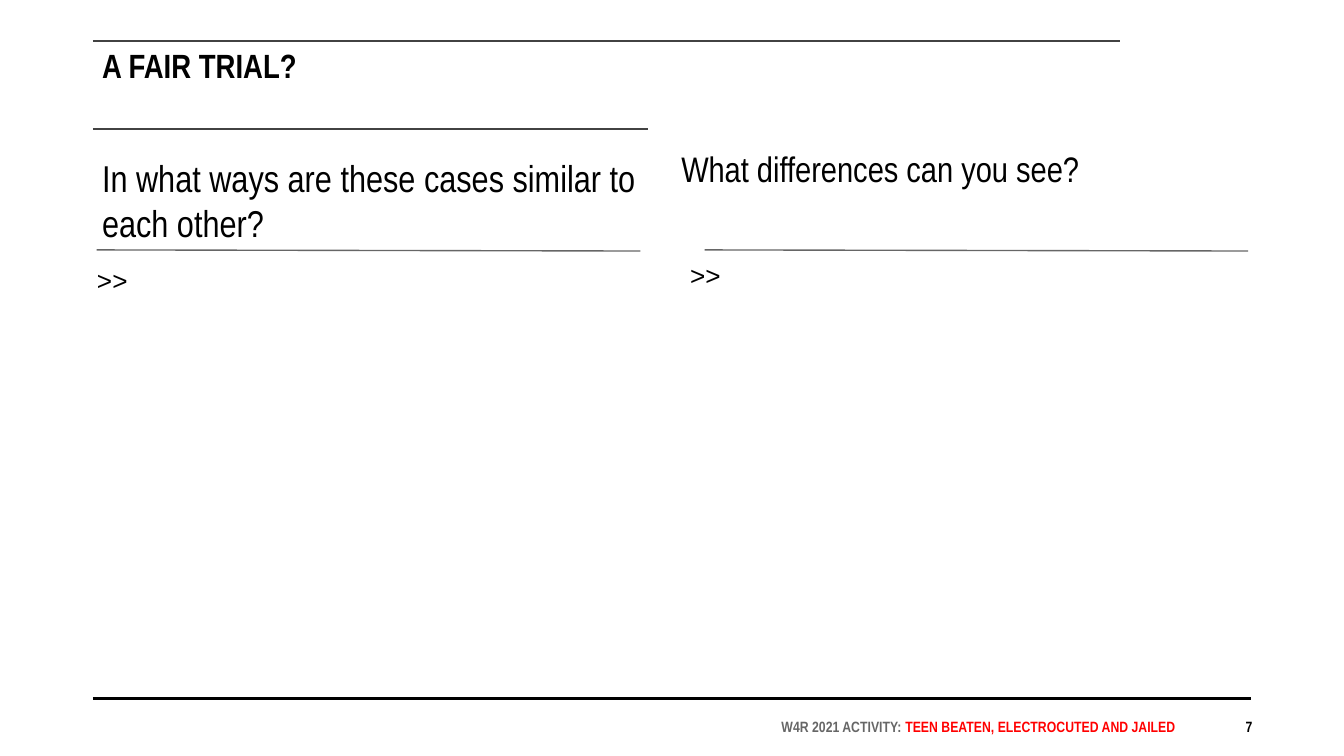
"""Build the slide that compares two cases under the title A FAIR TRIAL?"""
from lxml import etree
from pptx import Presentation
from pptx import util as u
from pptx.dml.color import RGBColor
from pptx.enum import shapes, text
from pptx.oxml import ns

Pt = u.Pt
theme = {
    "ink": RGBColor(0, 0, 0),
    "rule": RGBColor(0x42, 0x42, 0x42),
    "gray": RGBColor(0x66, 0x66, 0x66),
    "red": RGBColor(0xFF, 0, 0),
    "head": "Arial Narrow",
    "body": "Arial",
    "title": 18, "left": 20, "right": 19, "note": 14, "foot": 8,
}

deck = Presentation()
deck.slide_width, deck.slide_height = Pt(720), Pt(405)
slide = deck.slides.add_slide(deck.slide_layouts[6])

lines = [
    (49.7, 374.4, 670.3, 374.4, "ink", 1.5),
    (49.7, 21.8, 600, 21.8, "rule", 1),
    (49.7, 69.1, 347, 69.1, "rule", 1),
    (51.8, 133.9, 343, 134.5, "gray", 0.75),
    (377.5, 133.9, 668.7, 134.5, "gray", 0.75),
]
for *ends, tint, width in lines:
    line = slide.shapes.add_connector(shapes.MSO_CONNECTOR.STRAIGHT, *map(Pt, ends))
    line.line.color.rgb = theme[tint]
    line.line.width = Pt(width)
    etree.SubElement(line._element.spPr, ns.qn("a:effectLst"))

top, low = text.MSO_ANCHOR.TOP, text.MSO_ANCHOR.BOTTOM
start, end = text.PP_ALIGN.LEFT, text.PP_ALIGN.RIGHT
ask = {"pad": (5, 2.7), "anchor": top, "align": start, "face": "head", "bold": False}
note = {**ask, "pad": (7.2, 7.2), "face": "body", "size": "note"}
title = {**ask, "pad": (5, 0), "bold": True, "size": "title", "space": 0.9}
foot = {"pad": (0, 0), "anchor": low, "align": end, "face": "head", "bold": True, "size": "foot"}

boxes = [
    ((49.7, 26.6, 244, 37.4), title, [("A FAIR TRIAL?", "ink")]),
    ((49.7, 80.6, 297.4, 276.5), {**ask, "size": "left"},
     [("In what ways are these cases similar to each other?", "ink")]),
    ((360, 76.3, 297.4, 55.4), {**ask, "size": "right"},
     [("What differences can you see?", "ink")]),
    ((44.9, 134.6, 292.3, 222.5), note, [(">>", "ink")]),
    ((362.6, 132, 292.3, 222.5), note, [(">>", "ink")]),
    ((411.8, 381.6, 218.2, 12.2), foot,
     [("W4R 2021 ACTIVITY: ", "gray"), ("TEEN BEATEN, ELECTROCUTED AND JAILED", "red")]),
    ((635, 385.9, 36, 7.9), foot, [("7", "ink")]),
]
for place, style, runs in boxes:
    frame = slide.shapes.add_textbox(*map(Pt, place)).text_frame
    side, edge = map(Pt, style["pad"])
    form = {"word_wrap": True, "vertical_anchor": style["anchor"],
            "margin_left": side, "margin_right": side,
            "margin_top": edge, "margin_bottom": edge}
    for name, value in form.items():
        setattr(frame, name, value)
    para = frame.paragraphs[0]
    para.alignment = style["align"]
    para.line_spacing = style.get("space")
    for words, tint in runs:
        run = para.add_run()
        run.text = words
        font = {"name": theme[style["face"]], "size": Pt(theme[style["size"]]),
                "bold": style["bold"]}
        for name, value in font.items():
            setattr(run.font, name, value)
        run.font.color.rgb = theme[tint]

deck.save("out.pptx")
